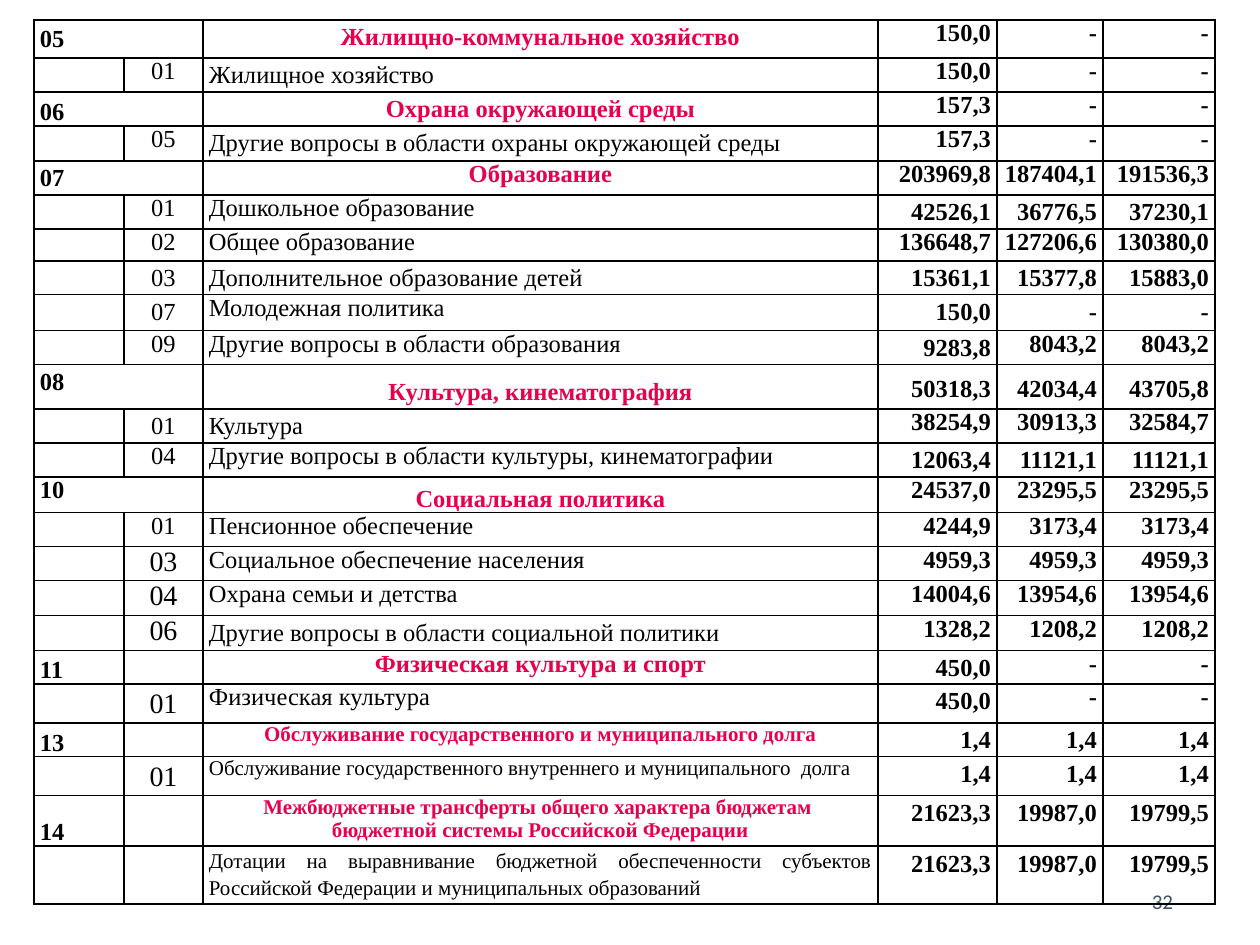
"""Build a slide with a table of budget spending by section and subsection."""
import lxml.etree
import pptx
import pptx.dml.color
import pptx.enum.text
import pptx.oxml.ns
import pptx.util

PX = 914400 / 126
FONT = "Times New Roman"
COLORS = {"text": "000000", "section": "E6004D", "number": "415065"}
ALIGN = pptx.enum.text.PP_ALIGN
ANCHOR = pptx.enum.text.MSO_ANCHOR
COL_WIDTHS = [90, 79, 675, 119, 106, 112]

# height, section, subsection, name, amounts, columns with loose line spacing
ROWS = [
    (38, "05", "", "Жилищно-коммунальное хозяйство", ("150,0", "-", "-"), "2"),
    (34, "", "01", "Жилищное хозяйство", ("150,0", "-", "-"), "2"),
    (34, "06", "", "Охрана окружающей среды", ("157,3", "-", "-"), "2"),
    (35, "", "05", "Другие вопросы в области охраны окружающей среды", ("157,3", "-", "-"), "2"),
    (34, "07", "", "Образование", ("203969,8", "187404,1", "191536,3"), "0"),
    (34, "", "01", "Дошкольное образование", ("42526,1", "36776,5", "37230,1"), "345"),
    (32, "", "02", "Общее образование", ("136648,7", "127206,6", "130380,0"), ""),
    (33, "", "03", "Дополнительное образование детей", ("15361,1", "15377,8", "15883,0"), "12345"),
    (36, "", "07", "Молодежная политика", ("150,0", "-", "-"), "1345"),
    (34, "", "09", "Другие вопросы в области образования", ("9283,8", "8043,2", "8043,2"), "3"),
    (44, "08", "", "Культура, кинематография", ("50318,3", "42034,4", "43705,8"), "0345"),
    (34, "", "01", "Культура", ("38254,9", "30913,3", "32584,7"), "12"),
    (34, "", "04", "Другие вопросы в области культуры, кинематографии",
     ("12063,4", "11121,1", "11121,1"), "345"),
    (36, "10", "", "Социальная политика", ("24537,0", "23295,5", "23295,5"), ""),
    (34, "", "01", "Пенсионное обеспечение", ("4244,9", "3173,4", "3173,4"), ""),
    (33, "", "03", "Социальное обеспечение населения", ("4959,3", "4959,3", "4959,3"), ""),
    (35, "", "04", "Охрана семьи и детства", ("14004,6", "13954,6", "13954,6"), ""),
    (35, "", "06", "Другие вопросы в области социальной политики", ("1328,2", "1208,2", "1208,2"), "2"),
    (33, "11", "", "Физическая культура и спорт", ("450,0", "-", "-"), "03"),
    (38, "", "01", "Физическая культура", ("450,0", "-", "-"), "13"),
    (34, "13", "", "Обслуживание государственного и муниципального долга", ("1,4", "1,4", "1,4"), "0345"),
    (39, "", "01", "Обслуживание государственного внутреннего и муниципального  долга",
     ("1,4", "1,4", "1,4"), "1345"),
    (50, "14", "", "Межбюджетные трансферты общего характера бюджетам  бюджетной системы Российской Федерации",
     ("21623,3", "19987,0", "19799,5"), "0345"),
    (58, "", "", "Дотации на выравнивание бюджетной обеспеченности субъектов Российской Федерации "
     "и муниципальных образований", ("21623,3", "19987,0", "19799,5"), "2345"),
]
MERGED = ("05", "06", "07", "08", "10")
LARGE_SUBSECTIONS = (15, 16, 17, 19, 21)
SMALL_NAMES = (20, 21, 22, 23)
SPACING = {(10, 2): 1.5}
ANCHORS = {(0, 0): ANCHOR.MIDDLE, (13, 2): ANCHOR.BOTTOM}
ANCHORS.update({(i, 0): ANCHOR.BOTTOM for i in (2, 18, 20, 22)})
ANCHORS.update({(10, j): ANCHOR.MIDDLE for j in (3, 4, 5)})


def px(n):
    return pptx.util.Emu(round(n * PX))


def add_run(p, text, size, color, font=FONT, bold=False):
    r = p.add_run()
    r.text = text
    r.font.name, r.font.size, r.font.bold = font, pptx.util.Pt(size), bold
    r.font.color.rgb = pptx.dml.color.RGBColor.from_string(COLORS[color])


def add_borders(cell):
    tc_pr = cell._tc.get_or_add_tcPr()
    qn = pptx.oxml.ns.qn
    for side in ("lnL", "lnR", "lnT", "lnB"):
        ln = lxml.etree.SubElement(tc_pr, qn("a:" + side), w="12700")
        fill = lxml.etree.SubElement(ln, qn("a:solidFill"))
        lxml.etree.SubElement(fill, qn("a:srgbClr"), val=COLORS["text"])


def fill_cell(cell, i, j, text, is_section, loose):
    add_borders(cell)
    cell.fill.background()
    cell.margin_left = cell.margin_right = px(6)
    cell.margin_top = cell.margin_bottom = 0
    cell.vertical_anchor = ANCHORS.get((i, j), ANCHOR.TOP)
    p = cell.text_frame.paragraphs[0]
    if not text:
        lxml.etree.SubElement(p._p, pptx.oxml.ns.qn("a:endParaRPr"), sz="1400")
        return
    name_align = ALIGN.CENTER if is_section else ALIGN.JUSTIFY
    p.alignment = (ALIGN.LEFT, ALIGN.CENTER, name_align)[j] if j < 3 else ALIGN.RIGHT
    if loose:
        p.line_spacing, p.space_after = 1.15, pptx.util.Pt(10)
    if (i, j) in SPACING:
        p.line_spacing = SPACING[i, j]
    size = 14
    if j == 1 and i in LARGE_SUBSECTIONS:
        size = 16
    elif j == 2 and i in SMALL_NAMES:
        size = 12
    color = "section" if is_section and j == 2 else "text"
    add_run(p, text, size, color, bold=is_section or j > 2)


def add_budget_table(s):
    heights = [row[0] for row in ROWS]
    table = s.shapes.add_table(len(ROWS), len(COL_WIDTHS), px(34), px(20),
                               px(sum(COL_WIDTHS)), px(sum(heights))).table
    table.first_row = table.horz_banding = False
    for col, width in zip(table.columns, COL_WIDTHS):
        col.width = px(width)
    for i, (height, section, subsection, name, amounts, loose) in enumerate(ROWS):
        table.rows[i].height = px(height)
        if section in MERGED:
            table.cell(i, 0).merge(table.cell(i, 1))
        for j, text in enumerate((section, subsection, name, *amounts)):
            cell = table.cell(i, j)
            if not cell.is_spanned:
                fill_cell(cell, i, j, text, bool(section), str(j) in loose)


def add_slide_number(s):
    tf = s.shapes.add_textbox(px(890), px(876), px(283), px(50)).text_frame
    tf.word_wrap = True
    tf.margin_left = tf.margin_right = tf.margin_top = tf.margin_bottom = 0
    tf.vertical_anchor = ANCHOR.MIDDLE
    p = tf.paragraphs[0]
    p.alignment = ALIGN.RIGHT
    add_run(p, "32", 12, "number", "Calibri")


def main():
    prs = pptx.Presentation()
    prs.slide_width, prs.slide_height = px(1260), px(945)
    s = prs.slides.add_slide(prs.slide_layouts[6])
    add_slide_number(s)
    add_budget_table(s)
    prs.save("out.pptx")


if __name__ == "__main__":
    main()
